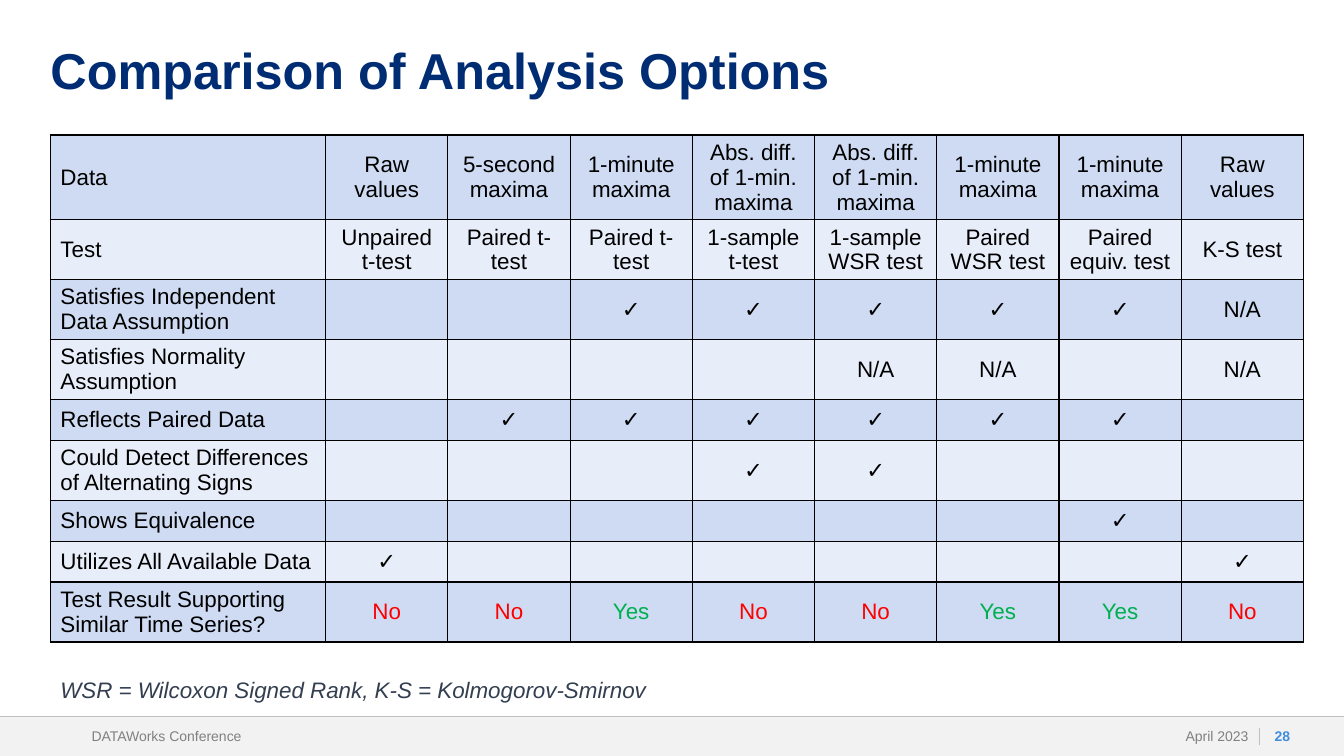
import lxml.etree
import pptx
import pptx.dml.color
import pptx.enum.shapes
import pptx.enum.text
import pptx.oxml.ns
import pptx.util

Inches = pptx.util.Inches
Align = pptx.enum.text.PP_ALIGN
Anchor = pptx.enum.text.MSO_ANCHOR

THEME = {
    "font": "Arial",
    "title": {"size": 36, "color": "002C73", "bold": True},
    "cell": {"size": 16, "color": "000000"},
    "No": {"size": 16, "color": "FF0000"},
    "Yes": {"size": 16, "color": "00B050"},
    "note": {"size": 16, "color": "333F50", "italic": True},
    "footer": {"size": 10, "color": "808080"},
    "number": {"size": 10, "color": "3E8EDE", "bold": True},
    "bands": ("CEDBF2", "E8EEF9"),
    "border": "000000",
    "footer_fill": "F2F2F2",
    "footer_line": "BFBFBF",
}

SLIDE_WIDTH, SLIDE_HEIGHT = 13.33, 7.5
FOOTER_TOP, FOOTER_HEIGHT = 7.11, 0.39

# Height in inches, then the row label and one entry per analysis option
ROWS = [
    (0.84, ["Data", "Raw values", "5-second maxima", "1-minute maxima",
            "Abs. diff. of 1-min. maxima", "Abs. diff. of 1-min. maxima",
            "1-minute maxima", "1-minute maxima", "Raw values"]),
    (0.59, ["Test", "Unpaired t-test", "Paired t-test", "Paired t-test",
            "1-sample t-test", "1-sample WSR test", "Paired WSR test",
            "Paired equiv. test", "K-S test"]),
    (0.59, ["Satisfies Independent Data Assumption",
            "", "", "✓", "✓", "✓", "✓", "✓", "N/A"]),
    (0.59, ["Satisfies Normality Assumption",
            "", "", "", "", "N/A", "N/A", "", "N/A"]),
    (0.39, ["Reflects Paired Data", "", "✓", "✓", "✓", "✓", "✓", "✓", ""]),
    (0.59, ["Could Detect Differences of Alternating Signs",
            "", "", "", "✓", "✓", "", "", ""]),
    (0.39, ["Shows Equivalence", "", "", "", "", "", "", "✓", ""]),
    (0.39, ["Utilizes All Available Data", "✓", "", "", "", "", "", "", "✓"]),
    (0.59, ["Test Result Supporting Similar Time Series?",
            "No", "No", "Yes", "No", "No", "Yes", "Yes", "No"]),
]
TABLE_LEFT, TABLE_TOP, TABLE_WIDTH = 0.5, 1.34, 12.43
LABEL_WIDTH = 2.73

# Text, box, style, alignment, anchor, side margin, top margin, line spacing
TEXTS = [
    ("Comparison of Analysis Options", (0.5, 0.46, 12.33, 0.83),
     "title", Align.LEFT, Anchor.TOP, 0, 0, 0.9),
    ("April 2023", (10.98, FOOTER_TOP, 1.5, FOOTER_HEIGHT),
     "footer", Align.RIGHT, Anchor.MIDDLE, 0.1, 0, 1.0),
    ("DATAWorks Conference", (0.81, FOOTER_TOP, 3.5, FOOTER_HEIGHT),
     "footer", Align.LEFT, Anchor.MIDDLE, 0.1, 0, 1.0),
    ("28", (12.51, FOOTER_TOP, 0.42, FOOTER_HEIGHT),
     "number", Align.CENTER, Anchor.MIDDLE, 0, 0, 1.0),
    ("WSR = Wilcoxon Signed Rank, K-S = Kolmogorov-Smirnov",
     (0.5, 6.66, 8.98, 0.37), "note", Align.LEFT, Anchor.TOP, 0.1, 0.05, 1.0),
]
FOOTER_LINES = [
    (0, FOOTER_TOP, SLIDE_WIDTH, FOOTER_TOP),
    (12.49, 7.22, 12.49, 7.39),
]


def rgb(value):
    return pptx.dml.color.RGBColor.from_string(value)


def write(paragraph, text, style, alignment):
    paragraph.alignment = alignment
    run = paragraph.add_run()
    run.text = text
    values = dict(THEME[style])
    run.font.color.rgb = rgb(values.pop("color"))
    values.update(name=THEME["font"], size=pptx.util.Pt(values["size"]))
    for name, value in values.items():
        setattr(run.font, name, value)


def add_text(slide, text, box, style, alignment, anchor, side, top, spacing):
    frame = slide.shapes.add_textbox(*map(Inches, box)).text_frame
    settings = {
        "word_wrap": True, "vertical_anchor": anchor,
        "margin_left": Inches(side), "margin_right": Inches(side),
        "margin_top": Inches(top), "margin_bottom": Inches(top),
    }
    for name, value in settings.items():
        setattr(frame, name, value)
    paragraph = frame.paragraphs[0]
    paragraph.line_spacing = spacing
    write(paragraph, text, style, alignment)


def add_footer_band(slide):
    band = slide.shapes.add_shape(
        pptx.enum.shapes.MSO_SHAPE.RECTANGLE, 0, Inches(FOOTER_TOP),
        Inches(SLIDE_WIDTH), Inches(FOOTER_HEIGHT))
    band.shadow.inherit = False
    band.fill.solid()
    band.fill.fore_color.rgb = rgb(THEME["footer_fill"])
    band.line.fill.background()
    for ends in FOOTER_LINES:
        line = slide.shapes.add_connector(
            pptx.enum.shapes.MSO_CONNECTOR.STRAIGHT, *map(Inches, ends))
        line.line.color.rgb = rgb(THEME["footer_line"])
        line.line.width = pptx.util.Pt(0.5)
        lxml.etree.SubElement(line._element.spPr,
                              pptx.oxml.ns.qn("a:effectLst"))


def add_borders(cell):
    """Draw all four edges; they must come before the fill in the cell."""
    qn = pptx.oxml.ns.qn
    properties = cell._tc.get_or_add_tcPr()
    for position, side in enumerate(("lnL", "lnR", "lnT", "lnB")):
        edge = lxml.etree.Element(qn("a:" + side),
                                  w=str(int(pptx.util.Pt(1))))
        fill = lxml.etree.SubElement(edge, qn("a:solidFill"))
        lxml.etree.SubElement(fill, qn("a:srgbClr"), val=THEME["border"])
        properties.insert(position, edge)


def add_comparison_table(slide):
    column_count = len(ROWS[0][1])
    option_width = (TABLE_WIDTH - LABEL_WIDTH) / (column_count - 1)
    height = sum(row_height for row_height, _ in ROWS)
    table = slide.shapes.add_table(
        len(ROWS), column_count, Inches(TABLE_LEFT), Inches(TABLE_TOP),
        Inches(TABLE_WIDTH), Inches(height)).table
    table.first_row = table.horz_banding = False
    for index, column in enumerate(table.columns):
        column.width = Inches(option_width if index else LABEL_WIDTH)
    for row_index, (row_height, texts) in enumerate(ROWS):
        table.rows[row_index].height = Inches(row_height)
        for column_index, text in enumerate(texts):
            cell = table.cell(row_index, column_index)
            cell.vertical_anchor = Anchor.MIDDLE
            cell.fill.solid()
            cell.fill.fore_color.rgb = rgb(THEME["bands"][row_index % 2])
            add_borders(cell)
            if text:
                write(cell.text_frame.paragraphs[0], text,
                      text if text in ("No", "Yes") else "cell",
                      Align.CENTER if column_index else Align.LEFT)


def main():
    presentation = pptx.Presentation()
    presentation.slide_width = Inches(SLIDE_WIDTH)
    presentation.slide_height = Inches(SLIDE_HEIGHT)
    slide = presentation.slides.add_slide(presentation.slide_layouts[6])
    add_footer_band(slide)
    add_comparison_table(slide)
    for entry in TEXTS:
        add_text(slide, *entry)
    presentation.save("out.pptx")


if __name__ == "__main__":
    main()
